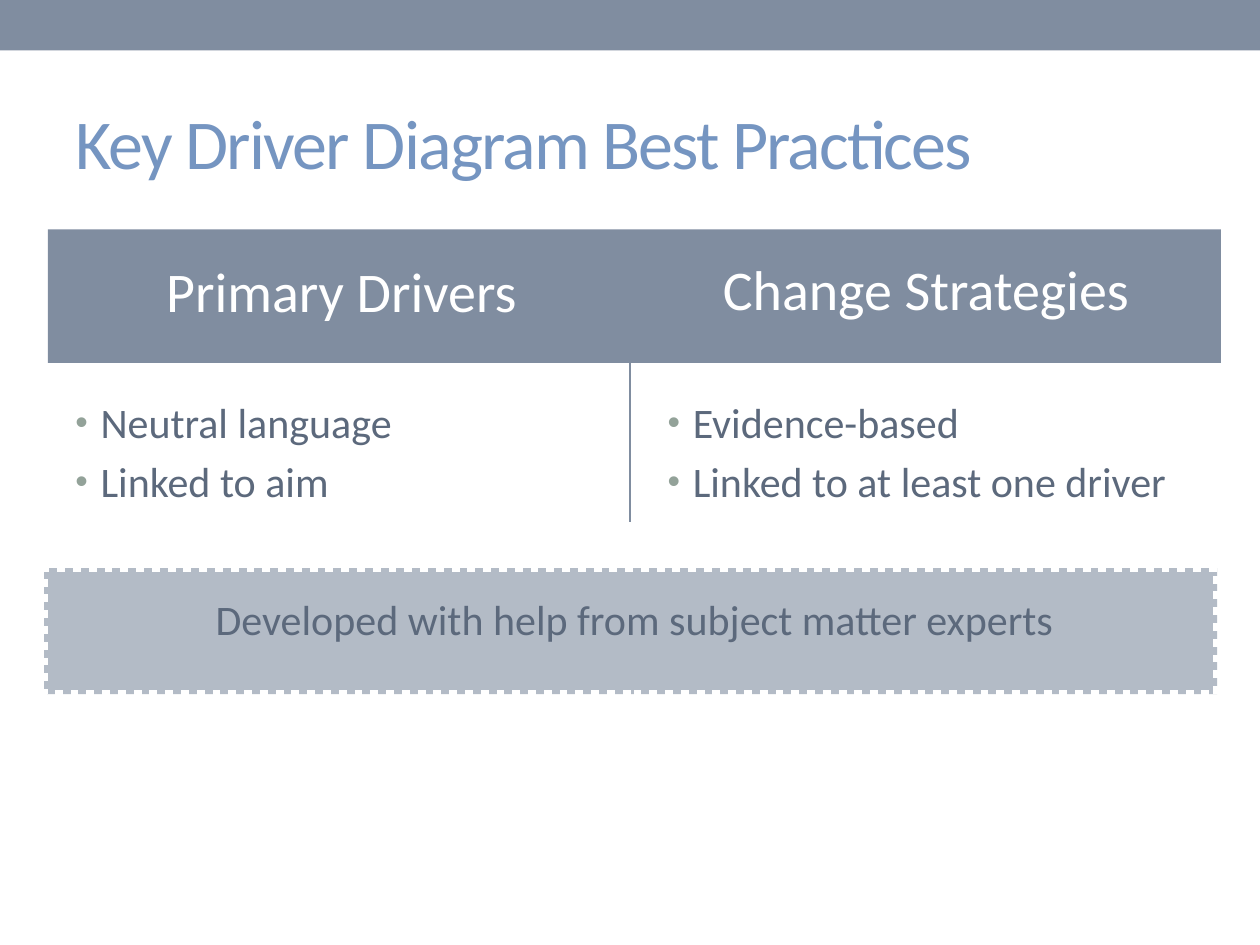
from dataclasses import dataclass
from typing import Any, Optional

from lxml.etree import SubElement
from pptx import Presentation
from pptx.dml.color import RGBColor
from pptx.enum.dml import MSO_LINE_DASH_STYLE as Dash
from pptx.enum.shapes import MSO_CONNECTOR as Connector, MSO_SHAPE as Preset
from pptx.enum.text import MSO_ANCHOR as Anchor, MSO_AUTO_SIZE as AutoSize, PP_ALIGN as Align
from pptx.oxml.ns import qn
from pptx.util import Pt


@dataclass(frozen=True)
class Theme:
    font: str = "Calibri"
    slate: str = "808DA0"
    pale: str = "B3BBC6"
    white: str = "FFFFFF"
    title: str = "7595C1"
    body: str = "5C697C"
    bullet: str = "93A299"
    title_size: float = 40
    heading_size: float = 32
    body_size: float = 24
    gap_size: float = 20


@dataclass(frozen=True)
class Box:
    left: float
    top: float
    width: float
    height: float

    def lengths(self) -> tuple:
        return tuple(Pt(v) for v in (self.left, self.top, self.width, self.height))


@dataclass(frozen=True)
class Band:
    box: Box
    fill: str
    outline: Optional[str] = None


@dataclass(frozen=True)
class Passage:
    box: Box
    paragraphs: tuple
    size: float
    color: str
    align: Any = Align.LEFT
    anchor: Any = Anchor.TOP
    space_before: float = 0
    indent: float = 0
    bulleted: bool = False


THEME = Theme()
BULLET_INDENT = 14.4
LIST_TOP, LIST_WIDTH, LIST_HEIGHT = 223.2, 309.6, 75
LEFT_COLUMN, RIGHT_COLUMN = 36, 374.4

BANDS = (
    Band(Box(0, 0, 720, 28.8), THEME.slate),
    Band(Box(27.36, 131.04, 670.32, 76.32), THEME.slate),
    Band(Box(25.2, 324.72, 670.32, 72), THEME.pale, THEME.white),
)


def bullet_list(left: float, *items: str) -> Passage:
    return Passage(Box(left, LIST_TOP, LIST_WIDTH, LIST_HEIGHT), items, THEME.body_size,
                   THEME.body, space_before=4.8, indent=BULLET_INDENT, bulleted=True)


TITLE = Passage(Box(36, 41.76, 648, 77.76), ("Key Driver Diagram Best Practices",),
                THEME.title_size, THEME.title, anchor=Anchor.MIDDLE)
PASSAGES = (
    Passage(Box(15.84, 140.4, 291.6, 50.4), ("Primary Drivers",), THEME.heading_size,
            THEME.white, anchor=Anchor.MIDDLE, space_before=6.4, indent=72),
    bullet_list(LEFT_COLUMN, "Neutral language", "Linked to aim"),
    Passage(Box(RIGHT_COLUMN, 141.84, LIST_WIDTH, 50.4), ("Change Strategies",),
            THEME.heading_size, THEME.white, align=Align.CENTER, space_before=6.4),
    bullet_list(RIGHT_COLUMN, "Evidence-based", "Linked to at least one driver"),
    Passage(Box(37.44, 335.52, 650.16, 36), ("Developed with help from subject matter experts",),
            THEME.body_size, THEME.body, align=Align.CENTER),
)


def apply(target: Any, values: dict) -> None:
    for attribute, value in values.items():
        setattr(target, attribute, value)


def rgb(color: str) -> RGBColor:
    return RGBColor.from_string(color)


def draw_band(slide: Any, band: Band) -> None:
    strip = slide.shapes.add_shape(Preset.RECTANGLE, *band.box.lengths())
    strip.shadow.inherit = False
    strip.fill.solid()
    strip.fill.fore_color.rgb = rgb(band.fill)
    if band.outline is None:
        strip.line.fill.background()
        return
    strip.line.color.rgb = rgb(band.outline)
    apply(strip.line, {"width": Pt(4.5), "dash_style": Dash.ROUND_DOT})


def draw_divider(slide: Any) -> None:
    divider = slide.shapes.add_connector(Connector.STRAIGHT, Pt(360), Pt(133.2), Pt(360), Pt(298.5))
    divider.line.color.rgb = rgb(THEME.slate)
    divider.line.width = Pt(1.5)
    SubElement(divider.element.spPr, qn("a:effectLst"))


def set_bullet(paragraph: Any) -> None:
    properties = paragraph.element.get_or_add_pPr() if hasattr(paragraph, "element") else paragraph._p.get_or_add_pPr()
    properties.set("indent", str(-Pt(BULLET_INDENT)))
    color = SubElement(properties, qn("a:buClr"))
    SubElement(color, qn("a:srgbClr"), val=THEME.bullet)
    SubElement(properties, qn("a:buSzPct"), val="85000")
    SubElement(properties, qn("a:buFont"), typeface="Arial")
    SubElement(properties, qn("a:buChar"), char="•")


def write(holder: Any, passage: Passage) -> None:
    frame = holder.text_frame
    frame.text = "\n".join(passage.paragraphs)
    apply(frame, {"word_wrap": True, "auto_size": AutoSize.NONE, "vertical_anchor": passage.anchor})
    for paragraph in frame.paragraphs:
        apply(paragraph, {"alignment": passage.align, "space_before": Pt(passage.space_before)})
        paragraph._p.get_or_add_pPr().set("marL", str(Pt(passage.indent)))
        if passage.bulleted:
            set_bullet(paragraph)
        for run in paragraph.runs:
            apply(run.font, {"name": THEME.font, "size": Pt(passage.size)})
            run.font.color.rgb = rgb(passage.color)


def draw_passage(slide: Any, passage: Passage) -> None:
    write(slide.shapes.add_textbox(*passage.box.lengths()), passage)


def draw_title(slide: Any) -> None:
    heading = slide.shapes.title
    apply(heading, dict(zip(("left", "top", "width", "height"), TITLE.box.lengths())))
    write(heading, TITLE)
    for run in heading.text_frame.paragraphs[0].runs:
        run.font._element.set("spc", "-100")


def main() -> None:
    deck = Presentation()
    apply(deck, {"slide_width": Pt(720), "slide_height": Pt(540)})
    slide = deck.slides.add_slide(deck.slide_layouts[5])
    draw_divider(slide)
    for band in BANDS:
        draw_band(slide, band)
    draw_title(slide)
    for passage in PASSAGES:
        draw_passage(slide, passage)
    deck.save("out.pptx")


if __name__ == "__main__":
    main()
